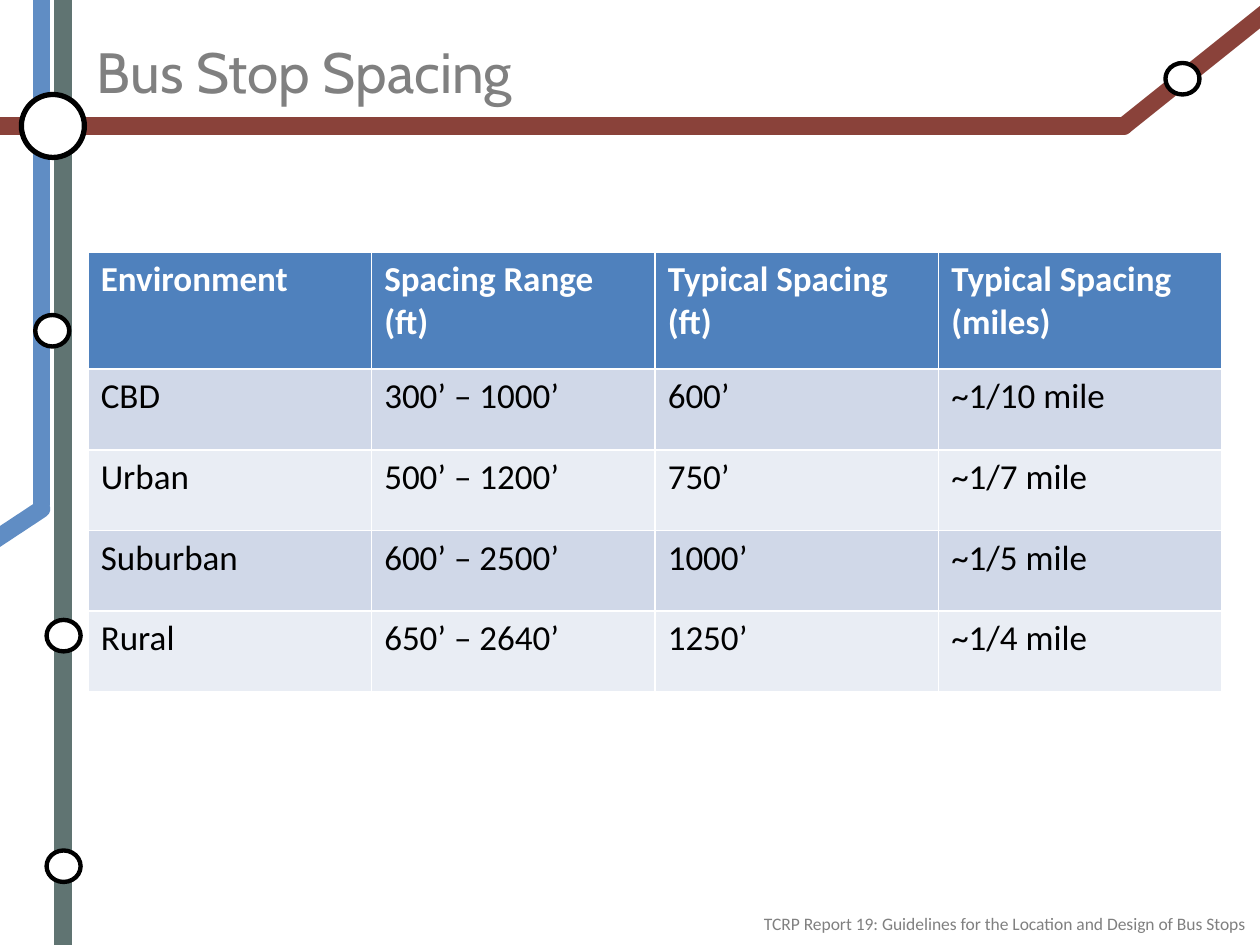
from lxml.etree import SubElement
from pptx import Presentation
from pptx.dml.color import RGBColor
from pptx.enum.shapes import MSO_CONNECTOR, MSO_SHAPE
from pptx.enum.text import MSO_ANCHOR, PP_ALIGN
from pptx.oxml.ns import qn
from pptx.util import Inches, Pt

GREEN = RGBColor(0x60, 0x74, 0x72)
BLUE = RGBColor(0x60, 0x8D, 0xC4)
RED = RGBColor(0x8A, 0x42, 0x3A)
WHITE = RGBColor(0xFF, 0xFF, 0xFF)
BLACK = RGBColor(0, 0, 0)
GRAY = RGBColor(0x80, 0x80, 0x80)
HEAD = RGBColor(0x4F, 0x81, 0xBD)
BANDS = RGBColor(0xE9, 0xED, 0xF4), RGBColor(0xD0, 0xD8, 0xE8)

TRACKS = [
    (GREEN, (0.5, 7.5), (0.5, 0)),
    (BLUE, (0.33, 4), (0.33, 0)),
    (BLUE, (0.33, 4.04), (-0.17, 4.37)),
    (RED, (0, 1), (8.92, 1)),
    (RED, (10.17, 0), (8.92, 1)),
]
STOPS = [(0.37, 4.92), (0.37, 6.75), (0.28, 2.5), (9.25, 0.5)]
ROWS = [
    ("Environment", "Spacing Range\n(ft)", "Typical Spacing (ft)", "Typical Spacing (miles)"),
    ("CBD", "300’ – 1000’", "600’", "~1/10 mile"),
    ("Urban", "500’ – 1200’", "750’", "~1/7 mile"),
    ("Suburban", "600’ – 2500’", "1000’", "~1/5 mile"),
    ("Rural", "650’ – 2640’", "1250’", "~1/4 mile"),
]


def style(frame, font, size, color, bold=False):
    """Format every run in a text frame."""
    for para in frame.paragraphs:
        for run in para.runs:
            run.font.name = font
            run.font.size = Pt(size)
            run.font.bold = bold
            run.font.color.rgb = color


def add_track(slide, color, start, end):
    """Draw one thick transit line with round ends."""
    line = slide.shapes.add_connector(
        MSO_CONNECTOR.STRAIGHT, *(Inches(v) for v in start + end))
    line.line.color.rgb = color
    line.line.width = Pt(10)
    line.line._get_or_add_ln().set("cap", "rnd")
    SubElement(line._element.spPr, qn("a:effectLst"))


def add_stop(slide, box, width):
    """Draw one round station in its box."""
    stop = slide.shapes.add_shape(MSO_SHAPE.OVAL, *(Inches(v) for v in box))
    stop.shadow.inherit = False
    stop.fill.solid()
    stop.fill.fore_color.rgb = WHITE
    stop.line.color.rgb = BLACK
    stop.line.width = Pt(width)


def add_map(slide):
    """Draw the transit map along the slide edges."""
    for color, start, end in TRACKS:
        add_track(slide, color, start, end)
    add_stop(slide, (0.17, 0.75, 0.5, 0.5), 3)
    for left, top in STOPS:
        add_stop(slide, (left, top, 0.27, 0.25), 2.5)


def add_label(slide, box, text, font, size, align, anchor):
    """Place one gray line of text in its box."""
    frame = slide.shapes.add_textbox(*(Inches(v) for v in box)).text_frame
    frame.word_wrap = True
    frame.vertical_anchor = anchor
    frame.text = text
    frame.paragraphs[0].alignment = align
    style(frame, font, size, GRAY)


def add_grid(slide, box, head):
    """Place the spacing table, with a header row of the given height."""
    count = len(ROWS)
    table = slide.shapes.add_table(
        count, len(ROWS[0]), *(Inches(v) for v in box)).table
    body = (box[3] - head) / (count - 1)
    for r, row in enumerate(ROWS):
        table.rows[r].height = Inches(body if r else head)
        for c, text in enumerate(row):
            cell = table.cell(r, c)
            cell.fill.solid()
            cell.fill.fore_color.rgb = BANDS[r % 2] if r else HEAD
            cell.text_frame.text = text
            style(cell.text_frame, "Calibri", 20, BLACK if r else WHITE, r == 0)


def main():
    """Build and save the slide."""
    deck = Presentation()
    deck.slide_width, deck.slide_height = Inches(10), Inches(7.5)
    slide = deck.slides.add_slide(deck.slide_layouts[6])
    add_map(slide)
    add_label(slide, (0.67, 0.3, 8.25, 0.53), "Bus Stop Spacing",
              "Cabin", 32.4, PP_ALIGN.LEFT, MSO_ANCHOR.MIDDLE)
    add_grid(slide, (0.7, 2, 9, 3.49), 0.93)
    add_label(slide, (1.81, 7.2, 8.17, 0.27),
              "TCRP Report 19: Guidelines for the Location and Design of Bus Stops",
              "Calibri", 10, PP_ALIGN.RIGHT, MSO_ANCHOR.TOP)
    deck.save("out.pptx")


if __name__ == "__main__":
    main()
